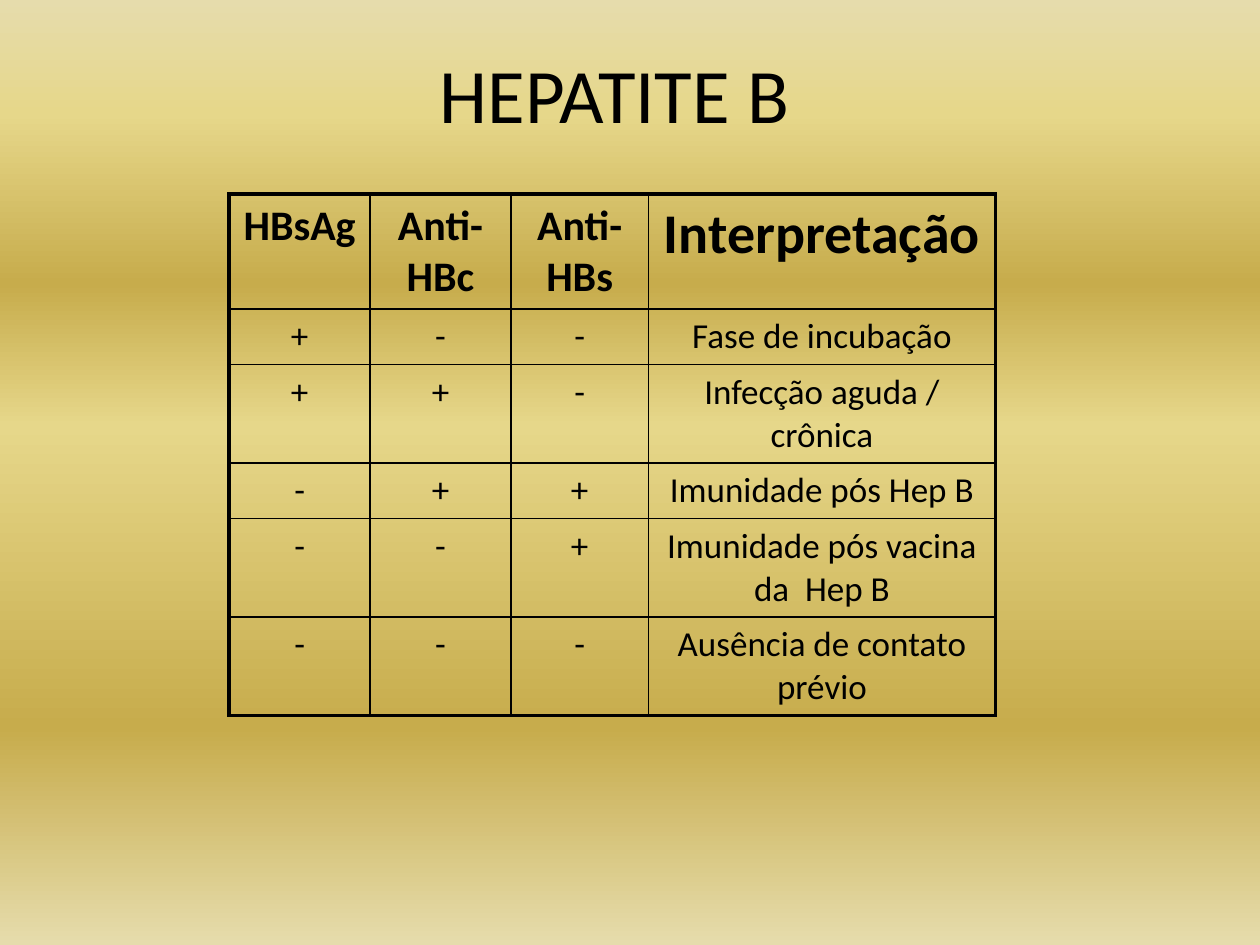
from lxml.etree import SubElement
from pptx import Presentation
from pptx.dml.color import RGBColor
from pptx.enum.text import MSO_ANCHOR as Anchor, MSO_AUTO_SIZE as AutoSize, PP_ALIGN as Align
from pptx.oxml.ns import qn
from pptx.util import Cm, Pt

BLACK = "000000"
STOPS = [(0, "E6DCAC"), (12, "E6D78A"), (30, "C7AC4C"),
         (45, "E6D78A"), (77, "C7AC4C"), (100, "E6DCAC")]
COLS = [2.84, 2.84, 2.77, 7]
ROWS = [2.29, 1.12, 1.95, 1.12, 1.95, 1.95]
RESULTS = [
    ["HBsAg", "Anti-HBc", "Anti-HBs", "Interpretação"],
    ["+", "-", "-", "Fase de incubação"],
    ["+", "+", "-", "Infecção aguda / crônica"],
    ["-", "+", "+", "Imunidade pós Hep B"],
    ["-", "-", "+", "Imunidade pós vacina da  Hep B"],
    ["-", "-", "-", "Ausência de contato prévio"],
]


def rgb(color):
    """Turn a hex string into a colour."""
    return RGBColor.from_string(color)


def write(tf, text, size=20, bold=False, color=BLACK, font="Calibri"):
    """Put one centred, formatted paragraph in a text frame."""
    p = tf.paragraphs[0]
    p.alignment = Align.CENTER
    r = p.add_run()
    r.text = text
    r.font.name, r.font.size, r.font.bold = font, Pt(size), bold
    r.font.color.rgb = rgb(color)


def set_background(s, stops):
    """Fill the slide with a vertical gradient."""
    fill = s.background.fill
    fill.gradient()
    fill.gradient_angle = 270
    gs_lst = s.element.find(".//" + qn("a:gsLst"))
    for gs in list(gs_lst):
        gs_lst.remove(gs)
    for pos, color in stops:
        gs = SubElement(gs_lst, qn("a:gs"), pos=str(pos * 1000))
        SubElement(gs, qn("a:srgbClr"), val=color)


def add_title(s, text):
    """Place and format the title placeholder."""
    sp = s.shapes.title
    sp.left, sp.top, sp.width, sp.height = Cm(5.69), Cm(0.71), Cm(13.41), Cm(2.11)
    tf = sp.text_frame
    tf.word_wrap, tf.auto_size = True, AutoSize.NONE
    tf.vertical_anchor = Anchor.TOP
    tf.margin_top = Cm(0.22)
    write(tf, text, size=44)


def set_borders(cell, widths, color=BLACK):
    """Draw the left, right, top and bottom borders of a cell."""
    tc_pr = cell._tc.get_or_add_tcPr()
    for side, width in zip("LRTB", widths):
        ln = SubElement(tc_pr, qn(f"a:ln{side}"), w=str(Pt(width)))
        fill = SubElement(ln, qn("a:solidFill"))
        SubElement(fill, qn("a:srgbClr"), val=color)


def add_results_table(s, rows):
    """Add the serology table with a thick frame and thin inner lines."""
    table = s.shapes.add_table(len(rows), len(COLS), Cm(4.62), Cm(3.91),
                               Cm(sum(COLS)), Cm(sum(ROWS))).table
    table.first_row = table.horz_banding = False
    for col, width in zip(table.columns, COLS):
        col.width = Cm(width)
    for row, height in zip(table.rows, ROWS):
        row.height = Cm(height)
    last_row, last_col = len(rows) - 1, len(COLS) - 1
    for i, row in enumerate(rows):
        for j, text in enumerate(row):
            cell = table.cell(i, j)
            edges = (j == 0, j == last_col, i == 0, i == last_row)
            set_borders(cell, [2.25 if edge else 1 for edge in edges])
            cell.fill.background()
            header_size = 32 if j == last_col else 24
            write(cell.text_frame, text, size=20 if i else header_size, bold=i == 0)


def main():
    """Build and save the slide."""
    prs = Presentation()
    prs.slide_width, prs.slide_height = Cm(25.4), Cm(19.05)
    s = prs.slides.add_slide(prs.slide_layouts[5])
    set_background(s, STOPS)
    add_results_table(s, RESULTS)
    add_title(s, "HEPATITE B")
    prs.save("out.pptx")


if __name__ == "__main__":
    main()
